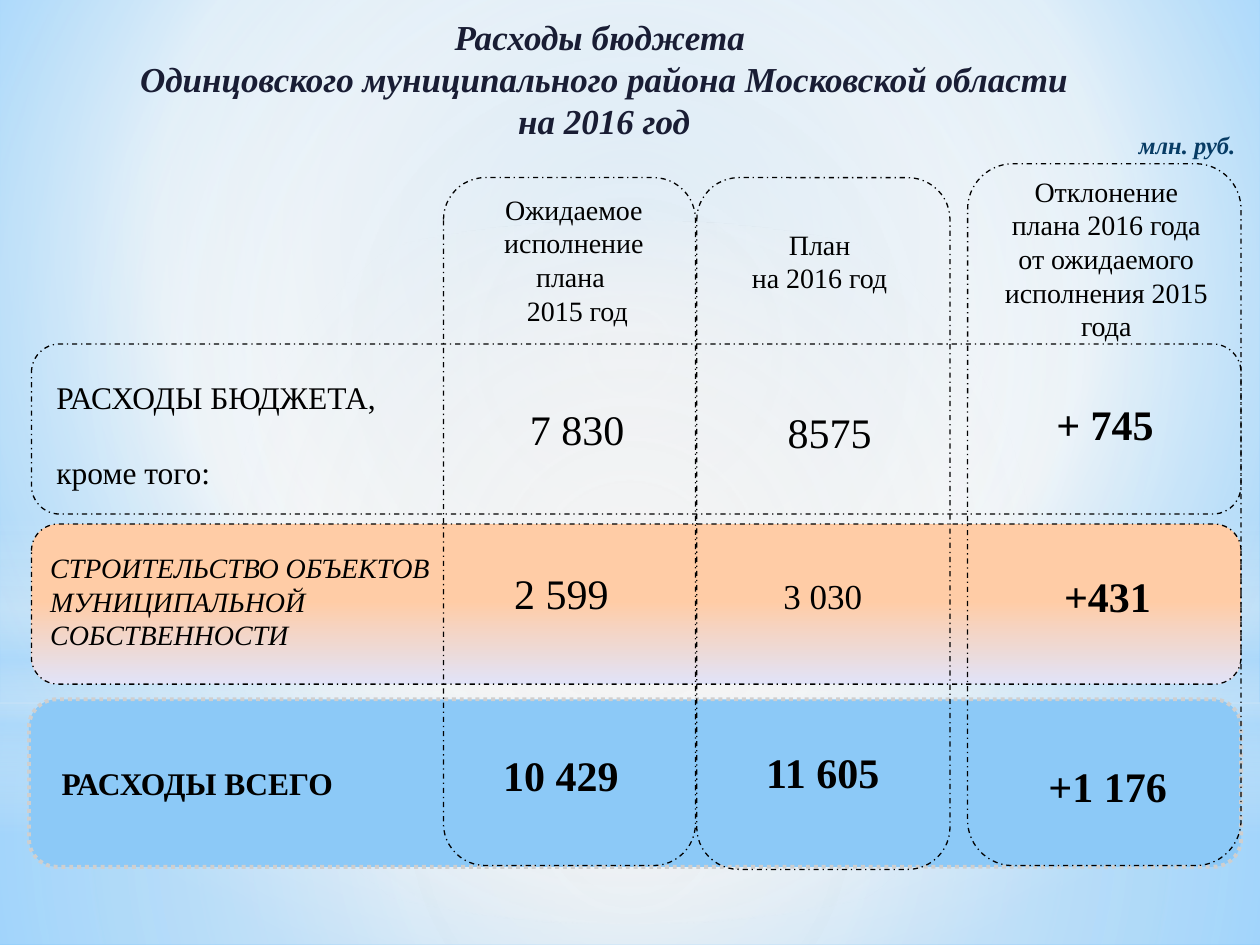
from lxml.etree import SubElement
from pptx import Presentation
from pptx.dml.color import RGBColor
from pptx.enum.dml import MSO_LINE
from pptx.enum.shapes import MSO_SHAPE
from pptx.enum.text import MSO_ANCHOR, MSO_AUTO_SIZE, PP_ALIGN
from pptx.oxml.ns import qn
from pptx.util import Inches, Pt


def rgb(value):
    return RGBColor.from_string(value)


class Board:
    FONT, INK = "Times New Roman", "000000"
    COLS, ROWS = 100, 75

    def __init__(self, prs):
        self.s = prs.slides.add_slide(prs.slide_layouts[6])
        self.unit_x = prs.slide_width / self.COLS
        self.unit_y = prs.slide_height / self.ROWS

    def place(self, x, y, w, h):
        units = (self.unit_x, self.unit_y) * 2
        return [round(v * u) for v, u in zip((x, y, w, h), units)]

    def gradient(self, owner, element, stops, angle=None, focus=None):
        owner.fill.solid()
        owner.fill.fore_color.rgb = rgb("FFFFFF")
        solid = element.find(".//" + qn("a:solidFill"))
        parent = solid.getparent()
        grad = SubElement(parent, qn("a:gradFill"), rotWithShape="1")
        parent.replace(solid, grad)
        stop_list = SubElement(grad, qn("a:gsLst"))
        for pos, color, *alpha in stops:
            gs = SubElement(stop_list, qn("a:gs"), pos=str(pos * 1000))
            clr = SubElement(gs, qn("a:srgbClr"), val=color)
            for share in alpha:
                SubElement(clr, qn("a:alpha"), val=str(share * 1000))
        if focus:
            sides = {k: str(v * 1000) for k, v in zip("ltrb", focus)}
            circle = SubElement(grad, qn("a:path"), path="circle")
            SubElement(circle, qn("a:fillToRect"), sides)
        else:
            SubElement(grad, qn("a:lin"), ang=str(angle * 60000), scaled="0")

    def background(self, stops, focus):
        self.gradient(self.s.background, self.s.element, stops, focus=focus)

    def shape(self, box, kind=MSO_SHAPE.ROUNDED_RECTANGLE):
        sp = self.s.shapes.add_shape(kind, *self.place(*box))
        sp.shadow.inherit = False
        sp.fill.background()
        sp.line.fill.background()
        return sp

    def glow(self, box, stops, kind=MSO_SHAPE.RECTANGLE, **direction):
        sp = self.shape(box, kind)
        self.gradient(sp, sp._element.spPr, stops, **direction)

    def frame(self, box, fill=None, stops=None, line=INK, width=0.75, dash=MSO_LINE.DASH_DOT):
        sp = self.shape(box)
        if fill:
            sp.fill.solid()
            sp.fill.fore_color.rgb = rgb(fill)
        if stops:
            self.gradient(sp, sp._element.spPr, stops, angle=90)
        sp.line.color.rgb = rgb(line)
        for name, value in {"width": Pt(width), "dash_style": dash}.items():
            setattr(sp.line, name, value)

    def text(self, box, lines, size=16, color=INK, align=PP_ALIGN.CENTER,
             anchor=MSO_ANCHOR.MIDDLE, wrap=True, fit=MSO_AUTO_SIZE.NONE, gap=0, **style):
        tf = self.s.shapes.add_textbox(*self.place(*box)).text_frame
        frame_format = {"word_wrap": wrap, "auto_size": fit, "vertical_anchor": anchor}
        for name, value in frame_format.items():
            setattr(tf, name, value)
        font_format = {"name": self.FONT, "size": Pt(size), **style}
        for i, line in enumerate(lines):
            p = tf.add_paragraph() if i else tf.paragraphs[0]
            p.alignment = align
            if i and gap:
                p.space_before = Pt(gap)
            r = p.add_run()
            r.text = line
            r.font.color.rgb = rgb(color)
            for name, value in font_format.items():
                setattr(r.font, name, value)


def add_backdrop(board):
    center = (50, 50, 50, 50)
    pale, sky = "F4F4F4", "B4DCFA"
    board.background([(0, "9ED5FF"), (60, "FFFFFF"), (100, "5BB9FF")], (20, 10, 20, 60))
    board.glow((0, 55.8, 100, 19.2), [(0, pale, 91), (37, pale, 76), (100, sky, 79)], focus=center)
    board.glow((0, 0, 100, 55.8), [(0, pale, 89), (48, pale, 62), (100, sky, 79)], focus=center)
    board.glow((0, 41.2, 100, 25),
               [(0, pale, 0), (29, pale, 30), (45, sky, 40), (55, pale, 26), (65, sky, 60), (100, pale, 0)],
               angle=90)
    board.glow((0, 17.5, 100, 55.8), [(0, pale), (56, pale, 0)], MSO_SHAPE.OVAL, focus=center)


def add_frames(board):
    board.frame((2.3, 55.5, 96.2, 13.3), fill="8CC9F7", line="CFCFCF", width=2.25, dash=MSO_LINE.ROUND_DOT)
    board.frame((2.5, 41.6, 96, 12.7), stops=[(7, "FFCCA6"), (48, "FFCCA6"), (100, "E1E3F8")])
    board.frame((2.5, 27.3, 96, 13.5))
    for column in [(35.2, 14.1, 20, 54.6), (55.3, 14.1, 20.1, 54.9), (76.8, 13, 21.7, 55.7)]:
        board.frame(column)


def add_texts(board):
    heading = {"bold": True, "italic": True, "anchor": MSO_ANCHOR.TOP, "fit": MSO_AUTO_SIZE.SHAPE_TO_FIT_TEXT}
    board.text((0, 0.7, 95.9, 11.1),
               ["Расходы бюджета ", "Одинцовского муниципального района Московской области", "на 2016 год"],
               20, "191D34", **heading)
    board.text((89.4, 9.8, 9.7, 3.4), ["млн. руб."], 14, "073C65", PP_ALIGN.LEFT, wrap=False, **heading)

    board.text((37.3, 15.8, 16.5, 9.6), ["Ожидаемое исполнение плана ", " 2015 год"])
    board.text((55.6, 15.9, 18.9, 9.6), ["План", "на 2016 год"])
    board.text((78.4, 13.5, 18.8, 14), ["Отклонение плана 2016 года от ожидаемого исполнения 2015 года"])

    left = PP_ALIGN.LEFT
    board.text((3.5, 29.1, 31.6, 10.8), ["РАСХОДЫ БЮДЖЕТА,", "кроме того:"], 18, align=left, gap=21)
    board.text((3, 42.2, 32.2, 11), ["СТРОИТЕЛЬСТВО ОБЪЕКТОВ МУНИЦИПАЛЬНОЙ СОБСТВЕННОСТИ"],
               align=left, italic=True)
    board.text((3.9, 58.1, 26.3, 8.1), ["РАСХОДЫ ВСЕГО"], 18, align=left, bold=True)

    values = [
        ("7 830", (37.8, 30.2, 16, 7.7), 24, False),
        ("8575", (58.6, 30.2, 14.5, 8.1), 24, False),
        ("+ 745", (81.3, 29.8, 12.8, 7.7), 24, True),
        ("2 599", (37.5, 43.2, 14.1, 7.7), 24, False),
        ("3 030", (58.2, 43.2, 14.2, 8.1), 20, False),
        ("+431", (80.7, 43.4, 14.4, 7.7), 24, True),
        ("10 429", (37.4, 57.6, 14.2, 7.7), 24, True),
        ("11 605", (58.1, 57.2, 14.4, 8.1), 24, True),
        (" +1 176", (79.1, 58.5, 16.8, 7.7), 24, True),
    ]
    for value, box, size, bold in values:
        board.text(box, [value], size, bold=bold)


def main():
    prs = Presentation()
    prs.slide_width, prs.slide_height = Inches(10), Inches(7.5)
    board = Board(prs)
    add_backdrop(board)
    add_frames(board)
    add_texts(board)
    prs.save("out.pptx")


if __name__ == "__main__":
    main()
